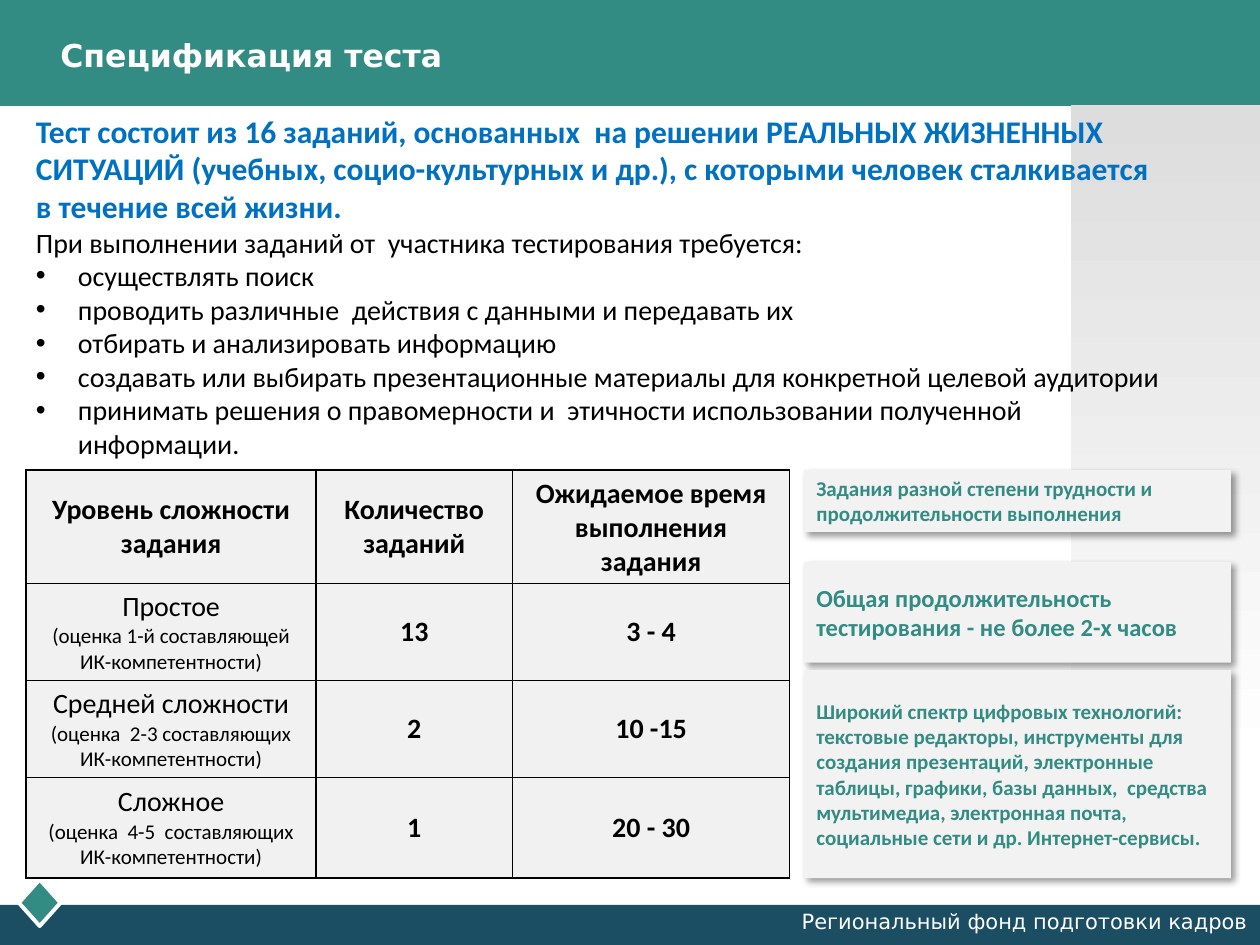
import pptx
import pptx.util
import pptx.dml.color
import pptx.enum.shapes
import pptx.enum.text
import pptx.oxml
import pptx.oxml.ns

Pt = pptx.util.Pt
KIND = pptx.enum.shapes.MSO_SHAPE
SIDE = pptx.enum.text.PP_ALIGN
MID = pptx.enum.text.MSO_ANCHOR.MIDDLE
TOP = pptx.enum.text.MSO_ANCHOR.TOP

THEME = {
    "teal": "328C83", "navy": "1B4E63", "white": "FFFFFF", "black": "000000",
    "blue": "0070C0", "gray": "DDDDDD", "cell": "F1F1F1", "card": "F2F2F2",
    "head": "DejaVu Sans", "body": "Calibri", "mark": "Arial",
    "title": 18, "lead": 18, "text": 16, "note": 14, "small": 12,
}

TITLE = "Спецификация теста"
FOOT = "Региональный фонд подготовки кадров"
LEAD = ("Тест состоит из 16 заданий, основанных  на решении РЕАЛЬНЫХ ЖИЗНЕННЫХ "
        "СИТУАЦИЙ (учебных, социо-культурных и др.), с которыми человек "
        "сталкивается в течение всей жизни.")
NEED = "При выполнении заданий от  участника тестирования требуется:"
TASKS = [
    "осуществлять поиск",
    "проводить различные  действия с данными и передавать их",
    "отбирать и анализировать информацию",
    "создавать или выбирать презентационные материалы для конкретной целевой аудитории",
    "принимать решения о правомерности и  этичности использовании полученной информации.",
]
HEADS = [
    ["Уровень сложности", "задания"],
    ["Количество заданий"],
    ["Ожидаемое время выполнения", "задания"],
]
LEVELS = [
    (["Простое", "(оценка 1-й составляющей", "ИК-компетентности)"], "13", "3 - 4"),
    (["Средней сложности", "(оценка  2-3 составляющих", "ИК-компетентности)"], "2", "10 -15"),
    (["Сложное", "(оценка  4-5  составляющих", "ИК-компетентности)"], "1", "20 - 30"),
]
COLS = [165.6, 112.3, 158.4]
ROWS = [64.5, 55.5, 55.5, 57.5]
CARDS = [
    (268.6, 35.3, "small", "Задания разной степени трудности и продолжительности выполнения"),
    (321.1, 57.6, "note", "Общая продолжительность тестирования - не более 2-х часов"),
    (383, 118.8, "small",
     "Широкий спектр цифровых технологий: текстовые редакторы, инструменты для "
     "создания презентаций, электронные таблицы, графики, базы данных,  средства "
     "мультимедиа, электронная почта, социальные сети и др. Интернет-сервисы."),
]

SHADE = """<a:effectLst %s><a:outerShdw blurRad="%d" dist="%d" dir="2700000"
algn="tl" rotWithShape="0"><a:srgbClr val="%s"><a:alpha val="40000"/></a:srgbClr>
</a:outerShdw></a:effectLst>"""
EDGE = """<a:%s %s w="%d"><a:solidFill><a:srgbClr val="%s"/></a:solidFill></a:%s>"""
NS = pptx.oxml.ns.nsdecls("a")
DOTS = [f'<a:buFont {NS} typeface="{THEME["mark"]}"/>', f'<a:buChar {NS} char="•"/>']


def tint(name):
    return pptx.dml.color.RGBColor.from_string(THEME[name])


def write(frame, text, size="text", color="black", font="body", bold=False,
          align=SIDE.LEFT, hang=0, first=False):
    par = frame.paragraphs[0] if first else frame.add_paragraph()
    par.alignment = align
    if hang:
        props = par._p.get_or_add_pPr()
        props.set("marL", str(Pt(hang)))
        props.set("indent", str(-Pt(hang)))
        for dot in DOTS:
            props.append(pptx.oxml.parse_xml(dot))
    run = par.add_run()
    run.text = text
    run.font.size = Pt(THEME[size])
    run.font.name = THEME[font]
    run.font.bold = bold
    run.font.color.rgb = tint(color)


def shape(slide, kind, box, fill):
    item = slide.shapes.add_shape(kind, *map(Pt, box))
    item.shadow.inherit = False
    item.fill.solid()
    item.fill.fore_color.rgb = tint(fill)
    item.line.fill.background()
    return item


def label(slide, box, anchor=TOP):
    frame = slide.shapes.add_textbox(*map(Pt, box)).text_frame
    frame.word_wrap = True
    frame.vertical_anchor = anchor
    return frame


def base(slide):
    shape(slide, KIND.RECTANGLE, (0, 0, 720, 60.5), "teal")
    shape(slide, KIND.RECTANGLE, (0, 517, 720, 23), "navy")
    gem = shape(slide, KIND.DIAMOND, (10.8, 502.6, 23.8, 26.6), "teal")
    gem.line.color.rgb = tint("white")
    gem.line.width = Pt(2.25)
    fade = shape(slide, KIND.RECTANGLE, (612, 60, 108, 378), "gray")
    fade.fill.gradient()
    fade.fill.gradient_angle = 270
    for stop, name, place in zip(fade.fill.gradient_stops, ("gray", "white"), (0, 1)):
        stop.color.rgb = tint(name)
        stop.position = place
    write(label(slide, (27.4, 9, 601.2, 44.6), MID), TITLE, size="title",
          color="white", font="head", bold=True, first=True)
    write(label(slide, (435.6, 515.5, 284.4, 18.7)), FOOT, size="small",
          color="white", font="head", align=SIDE.RIGHT, first=True)


def intro(slide):
    frame = label(slide, (13.5, 60.3, 659, 208))
    write(frame, LEAD, size="lead", color="blue", bold=True, first=True)
    write(frame, NEED)
    for task in TASKS:
        write(frame, task, hang=24)


def style(cell):
    cell.fill.solid()
    cell.fill.fore_color.rgb = tint("cell")
    cell.vertical_anchor = MID
    cell.margin_left = cell.margin_right = Pt(3.6)
    cell.margin_top = cell.margin_bottom = Pt(3.6)
    props = cell._tc.get_or_add_tcPr()
    for spot, tag in enumerate(("lnL", "lnR", "lnT", "lnB")):
        edge = EDGE % (tag, NS, Pt(1), THEME["black"], tag)
        props.insert(spot, pptx.oxml.parse_xml(edge))


def grid(slide):
    table = slide.shapes.add_table(len(ROWS), len(COLS), Pt(15), Pt(268.6),
                                   Pt(sum(COLS)), Pt(sum(ROWS))).table
    table.first_row = table.horz_banding = False
    for col, width in zip(table.columns, COLS):
        col.width = Pt(width)
    for row, height in zip(table.rows, ROWS):
        row.height = Pt(height)
    cells = [HEADS] + [[name, [count], [time]] for name, count, time in LEVELS]
    for r, row in enumerate(cells):
        for c, lines in enumerate(row):
            cell = table.cell(r, c)
            style(cell)
            level = r > 0 and c == 0
            for n, line in enumerate(lines):
                write(cell.text_frame, line, size="small" if level and n else "text",
                      bold=not level, align=SIDE.CENTER, first=n == 0)


def cards(slide):
    for top, height, size, text in CARDS:
        card = shape(slide, KIND.RECTANGLE, (459.4, top, 244, height), "card")
        props = card._element.spPr
        props.remove(props.find(pptx.oxml.ns.qn("a:effectLst")))
        shade = SHADE % (NS, Pt(4), Pt(3), THEME["black"])
        props.append(pptx.oxml.parse_xml(shade))
        card.text_frame.word_wrap = True
        card.text_frame.vertical_anchor = MID
        write(card.text_frame, text, size=size, color="teal", bold=True, first=True)


def main():
    deck = pptx.Presentation()
    deck.slide_width, deck.slide_height = Pt(720), Pt(540)
    slide = deck.slides.add_slide(deck.slide_layouts[6])
    base(slide)
    intro(slide)
    grid(slide)
    cards(slide)
    deck.save("out.pptx")


if __name__ == "__main__":
    main()
